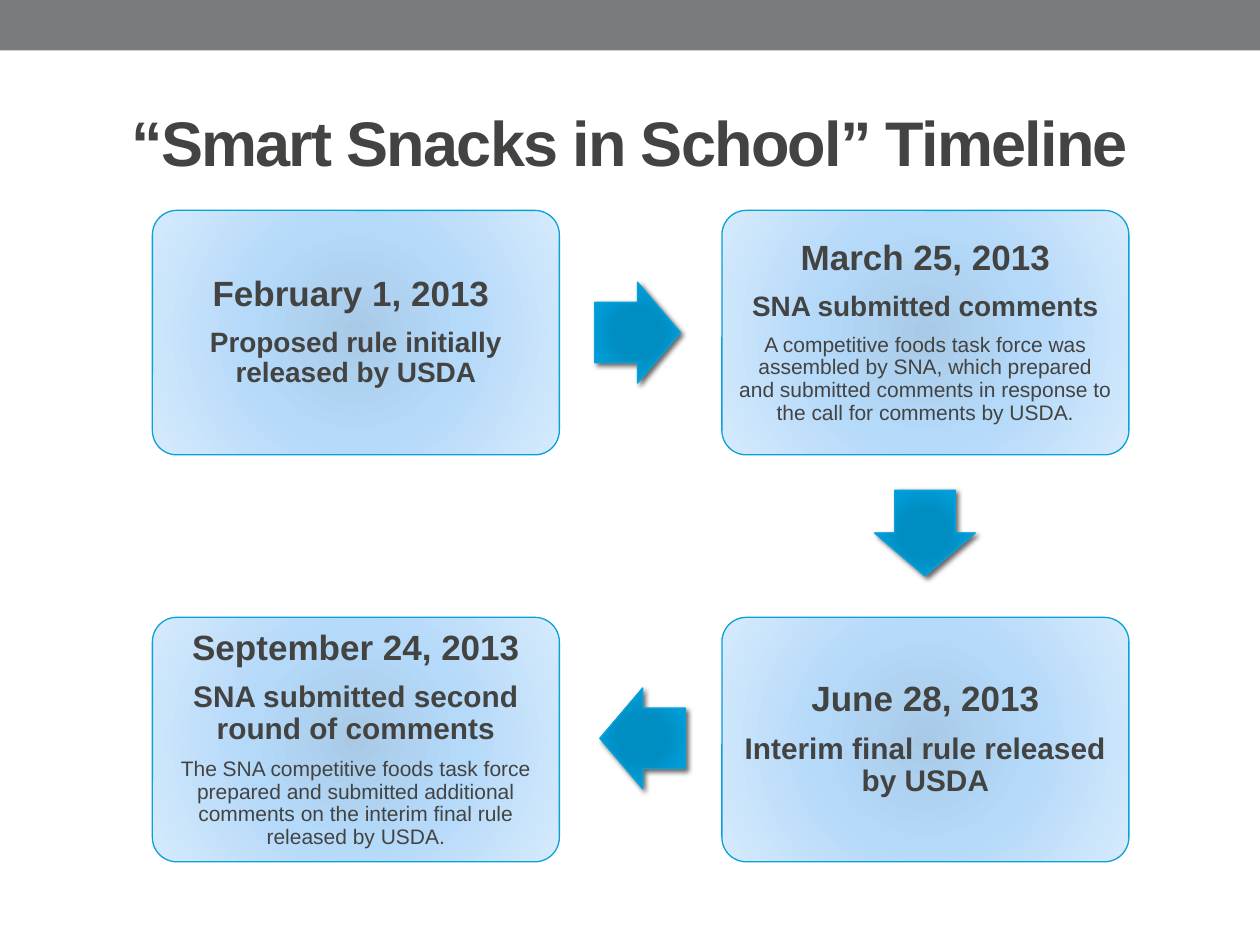
from lxml import etree
from pptx import Presentation
from pptx import util as u
from pptx.dml.color import RGBColor
from pptx.enum import shapes, text
from pptx.oxml import ns

GRAY = RGBColor(0x79, 0x7B, 0x7E)
DARK = RGBColor(0x43, 0x43, 0x42)
BLUE = RGBColor(0x08, 0xA1, 0xD9)
BLACK = RGBColor(0, 0, 0)
# Radial gradients: (position in percent, colour), from the centre outwards
CARD_STOPS = [(0, RGBColor(0xA8, 0xCA, 0xE7)), (45, RGBColor(0xB4, 0xD9, 0xF9)),
              (100, RGBColor(0xD6, 0xEA, 0xFC))]
ARROW_STOPS = [(0, RGBColor(0x00, 0x8D, 0xC1)), (34, RGBColor(0x00, 0x8D, 0xC1)),
               (70, RGBColor(0x00, 0x9D, 0xD7)), (100, BLUE)]

LEFT, RIGHT = 1.21, 5.73
TOP, BOTTOM = 1.67, 4.9
CARD_WIDTH, CARD_HEIGHT = 3.23, 1.94
ARROW_WIDTH, ARROW_HEIGHT = 0.68, 0.8

# Left, top, then (text, size, bold) for each paragraph
CARDS = [
    (LEFT, TOP, [("February 1, 2013 ", 20, True),
                 ("Proposed rule initially released by USDA", 16, True)]),
    (RIGHT, TOP, [("March 25, 2013", 20, True),
                  ("SNA submitted comments", 16, True),
                  ("A competitive foods task force was assembled by SNA, which prepared and "
                   "submitted comments in response to the call for comments by USDA.", 12, False)]),
    (RIGHT, BOTTOM, [("June 28, 2013", 20, True),
                     ("Interim final rule released by USDA", 17, True)]),
    (LEFT, BOTTOM, [("September 24, 2013", 20, True),
                    ("SNA submitted second round of comments", 17, True),
                    ("The SNA competitive foods task force prepared and submitted additional "
                     "comments on the interim final rule released by USDA.", 12, False)]),
]
# Left, top, rotation
ARROWS = [(4.72, 2.24, 0), (7, 3.83, 90), (4.76, 5.46, 180)]


def add_node(parent, tag, **attributes):
    node = etree.SubElement(parent, ns.qn(tag))
    for name, value in attributes.items():
        node.set(name, str(value))
    return node


class TimelineSlide:
    font = "Arial"

    def __init__(self, presentation):
        self.slide = presentation.slides.add_slide(presentation.slide_layouts[5])

    def style_run(self, run, size, bold):
        run.font.name = self.font
        run.font.size = u.Pt(size)
        run.font.bold = bold
        run.font.color.rgb = DARK

    def title(self, wording):
        title = self.slide.shapes.title
        title.left, title.top = u.Inches(0.5), u.Inches(0.58)
        title.width, title.height = u.Inches(9), u.Inches(1.08)
        title.text_frame.text = wording
        title.text_frame.vertical_anchor = text.MSO_ANCHOR.MIDDLE
        paragraph = title.text_frame.paragraphs[0]
        paragraph.alignment = text.PP_ALIGN.CENTER
        run = paragraph.runs[0]
        self.style_run(run, 36, True)
        run.font._element.set("spc", "-100")

    def shape(self, kind, left, top, width, height):
        shape = self.slide.shapes.add_shape(
            kind, u.Inches(left), u.Inches(top), u.Inches(width), u.Inches(height))
        shape.shadow.inherit = False
        return shape

    def bar(self, left, top, width, height):
        bar = self.shape(shapes.MSO_SHAPE.RECTANGLE, left, top, width, height)
        bar.fill.solid()
        bar.fill.fore_color.rgb = GRAY
        bar.line.fill.background()

    def glowing_shape(self, kind, left, top, width, height, stops):
        shape = self.shape(kind, left, top, width, height)
        shape.line.color.rgb = BLUE
        shape.line.width = u.Pt(0.75)
        gradient = etree.Element(ns.qn("a:gradFill"), rotWithShape="1")
        stop_list = add_node(gradient, "a:gsLst")
        for position, color in stops:
            stop = add_node(stop_list, "a:gs", pos=position * 1000)
            add_node(stop, "a:srgbClr", val=color)
        circle = add_node(gradient, "a:path", path="circle")
        add_node(circle, "a:fillToRect", l=50000, t=50000, r=50000, b=50000)
        shape._element.spPr.find(ns.qn("a:prstGeom")).addnext(gradient)
        return shape

    def card(self, left, top, lines):
        card = self.glowing_shape(shapes.MSO_SHAPE.ROUNDED_RECTANGLE, left, top,
                                  CARD_WIDTH, CARD_HEIGHT, CARD_STOPS)
        card.adjustments[0] = 0.1
        frame = card.text_frame
        frame.word_wrap = True
        frame.vertical_anchor = text.MSO_ANCHOR.MIDDLE
        frame.margin_left = frame.margin_right = u.Inches(0.08)
        frame.margin_top = frame.margin_bottom = u.Inches(0.08)
        frame.text = "\n".join(wording for wording, _, _ in lines)
        for paragraph, (_, size, bold) in zip(frame.paragraphs, lines):
            paragraph.alignment = text.PP_ALIGN.CENTER
            paragraph.line_spacing = 0.9
            paragraph.space_after = u.Pt(size * 0.4)
            self.style_run(paragraph.runs[0], size, bold)

    def arrow(self, left, top, rotation):
        arrow = self.glowing_shape(shapes.MSO_SHAPE.RIGHT_ARROW, left, top,
                                   ARROW_WIDTH, ARROW_HEIGHT, ARROW_STOPS)
        arrow.adjustments[0], arrow.adjustments[1] = 0.6, 0.5
        arrow.rotation = rotation
        effects = arrow._element.spPr.find(ns.qn("a:effectLst"))
        shadow = add_node(effects, "a:outerShdw", blurRad=u.Pt(3), dist=u.Pt(2),
                          dir=45 * 60000, rotWithShape=0)
        color = add_node(shadow, "a:srgbClr", val=BLACK)
        add_node(color, "a:alpha", val=60000)


def main():
    presentation = Presentation()
    presentation.slide_width, presentation.slide_height = u.Inches(10), u.Inches(7.5)
    timeline = TimelineSlide(presentation)

    # Header
    timeline.bar(0, 0, 10, 0.4)
    timeline.title("“Smart Snacks in School” Timeline")

    # Events, clockwise from the top left
    for card in CARDS:
        timeline.card(*card)

    # Arrows between the events
    for arrow in ARROWS:
        timeline.arrow(*arrow)

    presentation.save("out.pptx")


if __name__ == "__main__":
    main()
